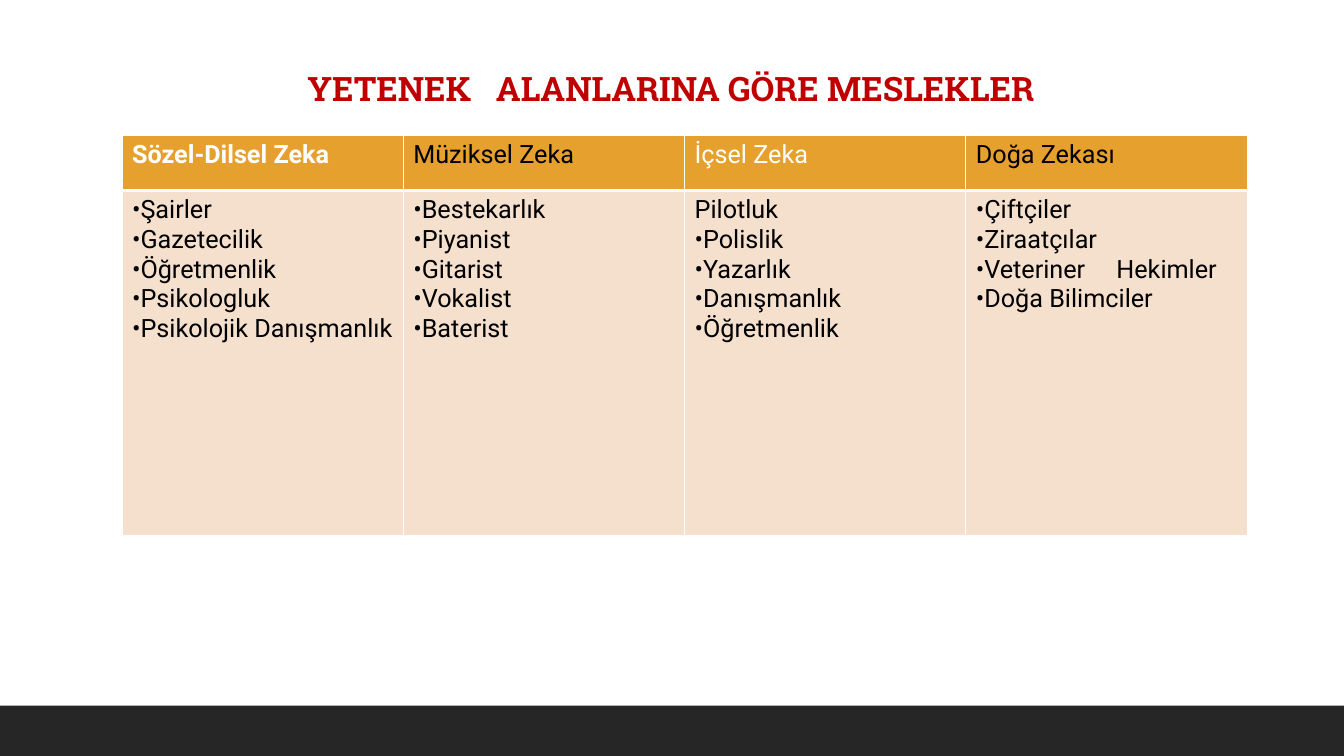
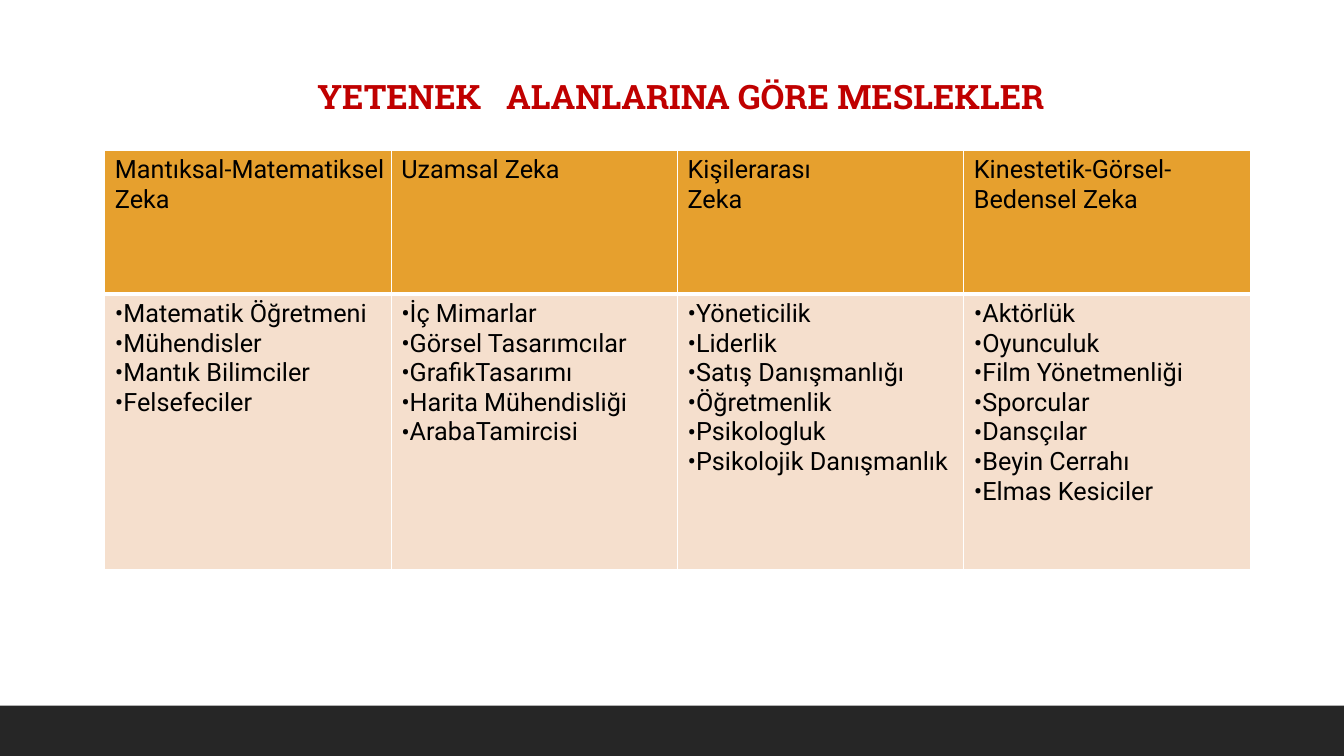
from dataclasses import dataclass

from lxml import etree
from pptx import Presentation
from pptx.dml.color import RGBColor
from pptx.enum import shapes, text
from pptx.oxml import ns
from pptx.util import Inches, Pt


@dataclass(frozen=True)
class Theme:
    white: str = "FFFFFF"
    black: str = "000000"
    band: str = "262626"
    title: str = "C00000"
    header: str = "E6A02E"
    body: str = "F5DFCD"
    title_font: str = "Roboto Slab"
    body_font: str = "Roboto"
    title_size: int = 24
    body_size: int = 18
    rule: int = 1
    header_rule: int = 3


@dataclass(frozen=True)
class Intelligence:
    """One table column: a kind of intelligence and its professions."""
    heading: str
    professions: tuple
    color: str = Theme.black
    bold: bool = False
    unbulleted: tuple = ()


class Deck:
    WIDTH, HEIGHT, BAND = 13.33, 7.5, 0.5
    BULLET_INDENT = 0.08

    def __init__(self, theme):
        self.theme = theme
        self.prs = Presentation()
        self.prs.slide_width = Inches(self.WIDTH)
        self.prs.slide_height = Inches(self.HEIGHT)
        self.slide = None

    def new_slide(self):
        self.slide = self.prs.slides.add_slide(self.prs.slide_layouts[5])

    def master_band(self):
        """Draw the bottom band and move it to the master, behind its placeholders."""
        band = self.slide.shapes.add_shape(
            shapes.MSO_SHAPE.RECTANGLE, 0, Inches(self.HEIGHT - self.BAND),
            Inches(self.WIDTH), Inches(self.BAND))
        band.shadow.inherit = False
        band.fill.solid()
        band.fill.fore_color.rgb = RGBColor.from_string(self.theme.band)
        band.line.fill.background()
        self.prs.slide_master.shapes[0].element.addprevious(band.element)

    def style(self, paragraph, font, size, color, bold=False):
        for run in paragraph.runs:
            run.font.name = font
            run.font.size = Pt(size)
            run.font.bold = bold
            run.font.color.rgb = RGBColor.from_string(color)

    def title(self, wording, left, top, width):
        title = self.slide.shapes.title
        title.left, title.top = Inches(left), Inches(top)
        title.width, title.height = Inches(width), Inches(0.5)
        frame = title.text_frame
        frame.text = wording
        frame.word_wrap = True
        frame.auto_size = text.MSO_AUTO_SIZE.SHAPE_TO_FIT_TEXT
        frame.vertical_anchor = text.MSO_ANCHOR.TOP
        heading = frame.paragraphs[0]
        heading.alignment = text.PP_ALIGN.CENTER
        self.style(heading, self.theme.title_font, self.theme.title_size,
                   self.theme.title, bold=True)

    def bullet(self, paragraph):
        props = paragraph._p.get_or_add_pPr()
        indent = Inches(self.BULLET_INDENT)
        props.set("marL", str(indent))
        props.set("indent", str(-indent))
        etree.SubElement(props, ns.qn("a:buFont"), typeface=self.theme.body_font)
        etree.SubElement(props, ns.qn("a:buChar"), char="•")

    def borders(self, cell, bottom):
        props = cell._tc.get_or_add_tcPr()
        rule = self.theme.rule
        for side, points in zip("LRTB", (rule, rule, rule, bottom)):
            line = etree.SubElement(props, ns.qn(f"a:ln{side}"), w=str(Pt(points)))
            fill = etree.SubElement(line, ns.qn("a:solidFill"))
            etree.SubElement(fill, ns.qn("a:srgbClr"), val=self.theme.white)

    def cell(self, cell, wording, fill, color, bold=False, bottom=Theme.rule):
        self.borders(cell, bottom)
        cell.fill.solid()
        cell.fill.fore_color.rgb = RGBColor.from_string(fill)
        cell.margin_right = Inches(0.05)
        cell.text_frame.text = wording
        for paragraph in cell.text_frame.paragraphs:
            self.style(paragraph, self.theme.body_font, self.theme.body_size, color, bold)

    def table(self, columns, left, top, width, row_heights):
        table = self.slide.shapes.add_table(
            len(row_heights), len(columns), Inches(left), Inches(top),
            Inches(width), Inches(sum(row_heights))).table
        table.first_row = table.horz_banding = False
        for row, height in zip(table.rows, row_heights):
            row.height = Inches(height)
        for index, column in enumerate(columns):
            self.cell(table.cell(0, index), column.heading, self.theme.header,
                      column.color, column.bold, self.theme.header_rule)
            professions = table.cell(1, index)
            self.cell(professions, "\n".join(column.professions),
                      self.theme.body, self.theme.black)
            for paragraph in professions.text_frame.paragraphs:
                if paragraph.text not in column.unbulleted:
                    self.bullet(paragraph)


TITLE = "YETENEK   ALANLARINA GÖRE MESLEKLER"

# Columns of the first slide
VERBAL_TO_NATURE = (
    Intelligence("Sözel-Dilsel Zeka",
                 ("Şairler", "Gazetecilik", "Öğretmenlik", "Psikologluk",
                  "Psikolojik Danışmanlık"), Theme.white, bold=True),
    Intelligence("Müziksel Zeka",
                 ("Bestekarlık", "Piyanist", "Gitarist", "Vokalist", "Baterist")),
    Intelligence("İçsel Zeka",
                 ("Pilotluk", "Polislik", "Yazarlık", "Danışmanlık", "Öğretmenlik"),
                 Theme.white, unbulleted=("Pilotluk",)),
    Intelligence("Doğa Zekası",
                 ("Çiftçiler", "Ziraatçılar", "Veteriner     Hekimler",
                  "Doğa Bilimciler")),
)

# Columns of the second slide
LOGICAL_TO_KINESTHETIC = (
    Intelligence("Mantıksal-Matematiksel Zeka",
                 ("Matematik Öğretmeni", "Mühendisler", "Mantık Bilimciler",
                  "Felsefeciler")),
    Intelligence("Uzamsal Zeka",
                 ("İç Mimarlar", "Görsel Tasarımcılar", "GrafikTasarımı",
                  "Harita Mühendisliği", "ArabaTamircisi")),
    Intelligence("Kişilerarası\nZeka",
                 ("Yöneticilik", "Liderlik", "Satış Danışmanlığı", "Öğretmenlik",
                  "Psikologluk", "Psikolojik Danışmanlık")),
    Intelligence("Kinestetik-Görsel-Bedensel Zeka",
                 ("Aktörlük", "Oyunculuk", "Film Yönetmenliği", "Sporcular",
                  "Dansçılar", "Beyin Cerrahı", "Elmas Kesiciler")),
)


def main():
    deck = Deck(Theme())

    # Verbal, musical, intrapersonal and nature intelligence
    deck.new_slide()
    deck.master_band()
    deck.title(TITLE, 2.2, 0.62, 8.91)
    deck.table(VERBAL_TO_NATURE, 1.21, 1.34, 11.16, (0.55, 3.42))

    # Logical, spatial, interpersonal and kinesthetic intelligence
    deck.new_slide()
    deck.title(TITLE, 2.15, 0.7, 9.21)
    deck.table(LOGICAL_TO_KINESTHETIC, 1.04, 1.49, 11.36, (1.43, 2.73))

    deck.prs.save("out.pptx")


if __name__ == "__main__":
    main()
